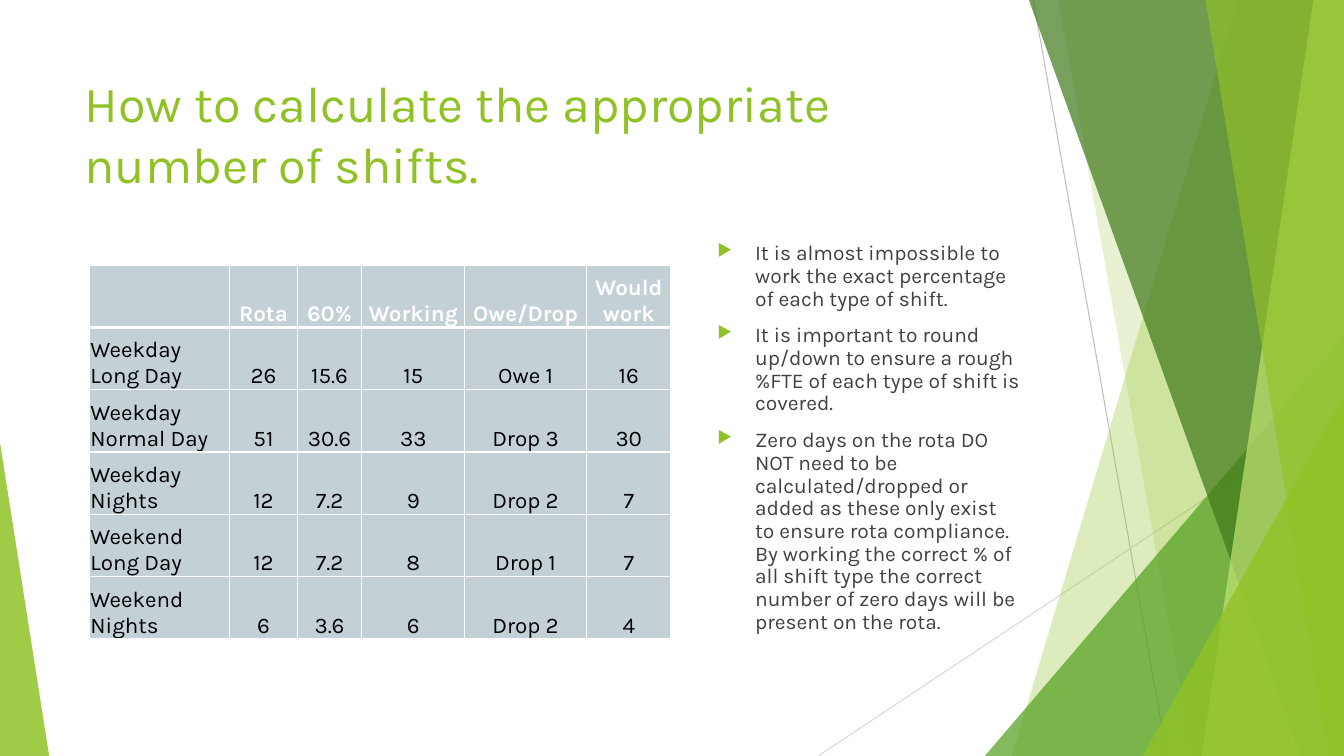
"""Build the slide on calculating the appropriate number of shifts."""
from dataclasses import dataclass
from typing import Any

from lxml import etree
from pptx import Presentation
from pptx import util as u
from pptx.dml.color import RGBColor
from pptx.enum import shapes, text
from pptx.oxml.ns import qn

FONT = "Karla"
GREEN, WHITE, BLACK, GREY = "90C226", "FFFFFF", "000000", "404040"
CELL_FILL = "C3D1D7"
PAGE_W, PAGE_H = 33.87, 19.05
TITLE = "How to calculate the appropriate number of shifts."
ADVICE = [
    "It is almost impossible to work the exact percentage of each type of shift.",
    "It is important to round up/down to ensure a rough %FTE of each type of shift is covered.",
    "Zero days on the rota DO NOT need to be calculated/dropped or added as these only exist "
    "to ensure rota compliance. By working the correct % of all shift type the correct "
    "number of zero days will be present on the rota.",
]
SHIFT_ROWS = [
    ["", "Rota", "60%", "Working", "Owe/Drop", "Would work"],
    ["Weekday Long Day", "26", "15.6", "15", "Owe 1", "16"],
    ["Weekday Normal Day", "51", "30.6", "33", "Drop 3", "30"],
    ["Weekday Nights", "12", "7.2", "9", "Drop 2", "7"],
    ["Weekend Long Day", "12", "7.2", "8", "Drop 1", "7"],
    ["Weekend Nights", "6", "3.6", "6", "Drop 2", "4"],
]
COLUMN_WIDTHS = [3.53, 1.7, 1.63, 2.59, 3.07, 2.13]
ROW_HEIGHT = 1.57


@dataclass
class Ray:
    """A thin line between two points."""
    x1: float
    y1: float
    x2: float
    y2: float
    color: str


@dataclass
class Shard:
    """A full-height panel that reaches the right edge of the page."""
    top_x: float
    bottom_x: float
    color: str
    opacity: int


@dataclass
class Wedge:
    """A triangle that stands on the bottom edge of the page."""
    left: float
    top: float
    width: float
    apex: float
    color: str
    opacity: int


DECORATION = [
    Ray(26.04, 0, 29.41, PAGE_H, "BFBFBF"),
    Ray(PAGE_W, 10.24, 20.62, PAGE_H, "D9D9D9"),
    Shard(31.19, 25.5, GREEN, 30),
    Shard(26.67, 30.05, GREEN, 20),
    Wedge(24.82, 8.46, 9.05, 1, "54A021", 72),
    Shard(25.93, 32.79, "3F7819", 70),
    Shard(33.1, 30.28, "C0E474", 70),
    Shard(30.38, 33.48, GREEN, 65),
    Wedge(28.8, 9.98, 5.07, 1, GREEN, 80),
    Wedge(0, 11.15, 1.24, 0, GREEN, 85),
]


def rgb(color: str) -> RGBColor:
    """Turn a hex string into a colour."""
    return RGBColor.from_string(color)


def apply_format(target: Any, values: dict[str, Any]) -> None:
    """Set each named attribute on the target."""
    for name, value in values.items():
        setattr(target, name, value)


def add_xml(parent: Any, tag: str, **attributes: str) -> Any:
    """Append a drawing element to the parent."""
    return etree.SubElement(parent, qn(tag), attributes)


def write(para: Any, words: str, size: int, color: str, bold: bool = False) -> None:
    """Add one formatted span to a paragraph."""
    span = para.add_run()
    span.text = words
    apply_format(span.font, {"name": FONT, "size": u.Pt(size), "bold": bold})
    span.font.color.rgb = rgb(color)


def draw_ray(page: Any, ray: Ray) -> None:
    """Draw a thin line."""
    ends = [u.Cm(value) for value in (ray.x1, ray.y1, ray.x2, ray.y2)]
    line = page.shapes.add_connector(shapes.MSO_CONNECTOR.STRAIGHT, *ends)
    line.line.color.rgb = rgb(ray.color)
    line.line.width = u.Pt(0.75)
    add_xml(line._element.spPr, "a:effectLst")


def draw_panel(page: Any, panel: Shard | Wedge) -> None:
    """Draw a translucent shard or wedge."""
    if isinstance(panel, Shard):
        builder = page.shapes.build_freeform(u.Cm(panel.top_x), 0)
        corners = [(PAGE_W, 0), (PAGE_W, PAGE_H), (panel.bottom_x, PAGE_H)]
        builder.add_line_segments([(u.Cm(x), u.Cm(y)) for x, y in corners])
        shape = builder.convert_to_shape()
    else:
        box = (panel.left, panel.top, panel.width, PAGE_H - panel.top)
        shape = page.shapes.add_shape(
            shapes.MSO_SHAPE.ISOSCELES_TRIANGLE, *[u.Cm(value) for value in box])
        shape.adjustments[0] = panel.apex
    shape.shadow.inherit = False
    shape.line.fill.background()
    shape.fill.solid()
    shape.fill.fore_color.rgb = rgb(panel.color)
    hue = shape._element.spPr.find(".//" + qn("a:srgbClr"))
    add_xml(hue, "a:alpha", val=str(panel.opacity * 1000))


def add_text_frame(page: Any, left: float, top: float, width: float, height: float) -> Any:
    """Add a wrapping text box and return its frame."""
    box = page.shapes.add_textbox(u.Cm(left), u.Cm(top), u.Cm(width), u.Cm(height))
    box.text_frame.word_wrap = True
    return box.text_frame


def add_advice(page: Any) -> None:
    """Add the bulleted advice."""
    frame = add_text_frame(page, 17.83, 5.99, 8.13, 10.77)
    for index, words in enumerate(ADVICE):
        para = frame.add_paragraph() if index else frame.paragraphs[0]
        apply_format(para, {"line_spacing": 0.9, "space_before": u.Pt(10)})
        write(para, words, 15, GREY)
        props = para._p.get_or_add_pPr()
        indent = u.Cm(0.95)
        props.set("marL", str(indent))
        props.set("indent", str(-indent))
        add_xml(add_xml(props, "a:buClr"), "a:srgbClr", val=GREEN)
        add_xml(props, "a:buSzPct", val="80000")
        add_xml(props, "a:buChar", char="▶")


def set_borders(cell: Any, widths: dict[str, int]) -> None:
    """Give a cell white borders of the given point widths."""
    props = cell._tc.get_or_add_tcPr()
    for side, width in widths.items():
        border = add_xml(props, f"a:ln{side}", w=str(u.Pt(width)))
        add_xml(add_xml(border, "a:solidFill"), "a:srgbClr", val=WHITE)


def add_shift_table(page: Any) -> None:
    """Add the table of shifts."""
    rows, columns = len(SHIFT_ROWS), len(COLUMN_WIDTHS)
    table = page.shapes.add_table(
        rows, columns, u.Cm(2.26), u.Cm(6.68),
        u.Cm(sum(COLUMN_WIDTHS)), u.Cm(ROW_HEIGHT * rows)).table
    apply_format(table, {"first_row": False, "horz_banding": False})
    for column, width in zip(table.columns, COLUMN_WIDTHS):
        column.width = u.Cm(width)
    inset = u.Cm(0.02)
    cell_format = {"margin_left": inset, "margin_top": inset, "margin_right": inset,
                   "margin_bottom": 0, "vertical_anchor": text.MSO_ANCHOR.BOTTOM}
    for r, values in enumerate(SHIFT_ROWS):
        table.rows[r].height = u.Cm(ROW_HEIGHT)
        header = r == 0
        for c, words in enumerate(values):
            cell = table.cell(r, c)
            apply_format(cell, cell_format)
            set_borders(cell, {"L": 1, "R": 1, "T": 3 if r == 1 else 1, "B": 3 if header else 1})
            cell.fill.solid()
            cell.fill.fore_color.rgb = rgb(CELL_FILL)
            para = cell.text_frame.paragraphs[0]
            para.alignment = text.PP_ALIGN.CENTER if c else text.PP_ALIGN.LEFT
            if words:
                write(para, words, 16, WHITE if header else BLACK, header)


def main() -> None:
    """Build and save the deck."""
    deck = Presentation()
    apply_format(deck, {"slide_width": u.Cm(PAGE_W), "slide_height": u.Cm(PAGE_H)})
    page = deck.slides.add_slide(deck.slide_layouts[6])
    for item in DECORATION:
        (draw_ray if isinstance(item, Ray) else draw_panel)(page, item)
    title = add_text_frame(page, 1.88, 1.7, 23.88, 3.66)
    write(title.paragraphs[0], TITLE, 36, GREEN)
    add_advice(page)
    add_shift_table(page)
    deck.save("out.pptx")


if __name__ == "__main__":
    main()
